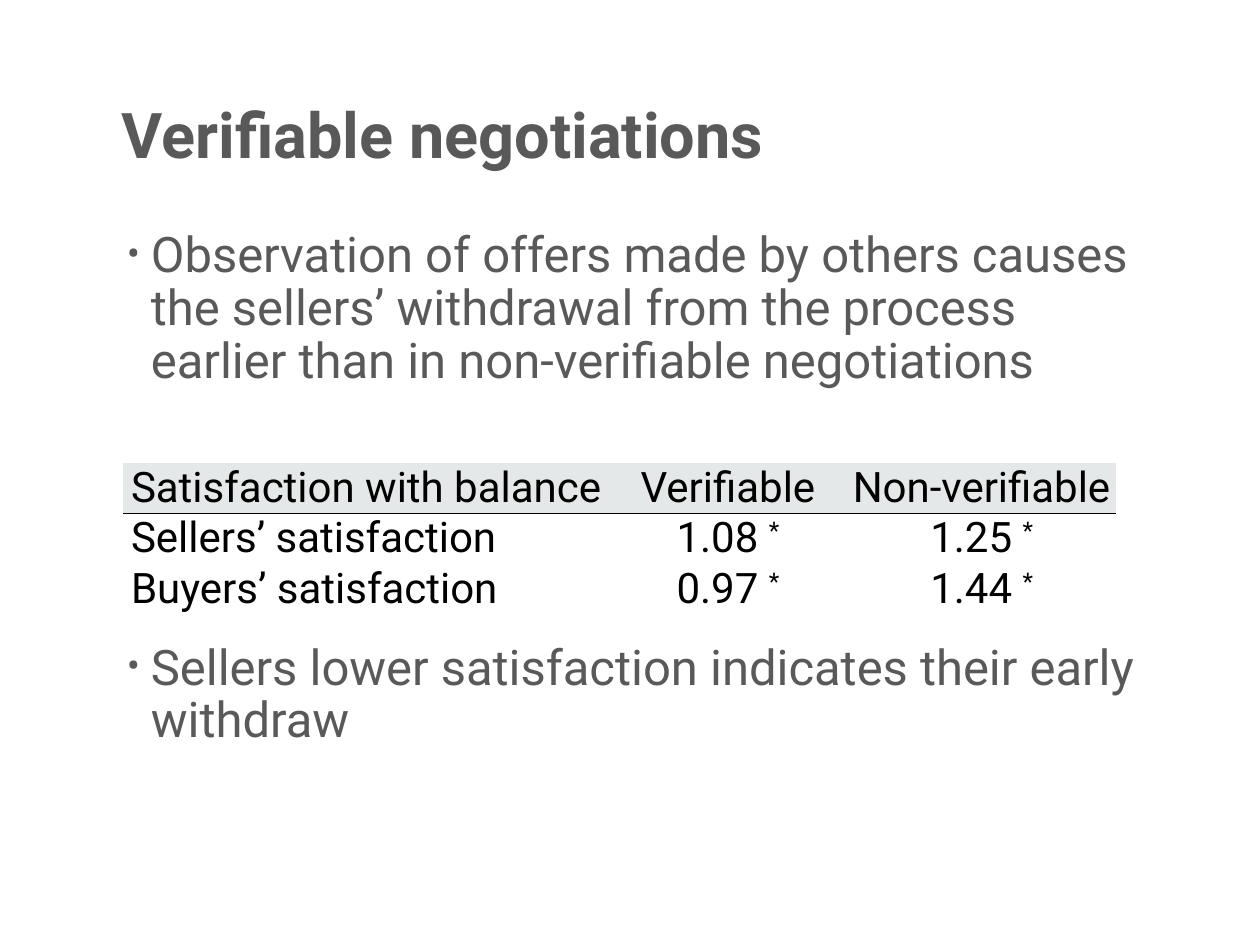
from dataclasses import dataclass

from lxml.etree import SubElement
from pptx import Presentation
from pptx.dml.color import RGBColor
from pptx.enum.text import MSO_ANCHOR as Anchor, PP_ALIGN as Align
from pptx.oxml.ns import qn
from pptx.util import Inches, Pt


@dataclass(frozen=True)
class Theme:
    """Colours, font and type sizes of the slide."""
    font: str = "Roboto"
    heading: str = "595959"
    ink: str = "000000"
    band: str = "E5E8E8"
    title_size: int = 36
    body_size: int = 28
    table_size: int = 24
    rule_width: int = 1


@dataclass(frozen=True)
class Box:
    """A region in inches."""
    left: float
    top: float
    width: float
    height: float

    def emu(self):
        """Return the region as slide lengths."""
        return [Inches(n) for n in (self.left, self.top, self.width, self.height)]


THEME = Theme()
WIDTH, HEIGHT = 10, 7.5
LEFT = 0.087 * WIDTH
TITLE = Box(LEFT, 0.077 * HEIGHT, 0.713 * WIDTH, 0.11 * HEIGHT)
BODY = Box(LEFT, 0.237 * HEIGHT, 0.83 * WIDTH, 0.61 * HEIGHT)
TABLE = Box(0.098 * WIDTH, 0.49 * HEIGHT, 0.788 * WIDTH, 0.156 * HEIGHT)
COLUMN_SHARES = (0.489, 0.241, 0.27)
BULLETS = (
    ("Observation of offers made by others causes the sellers’ withdrawal "
     "from the process earlier than in non-verifiable negotiations", 0),
    ("Sellers lower satisfaction indicates their early withdraw", 145),
)
SATISFACTION = (
    ("Satisfaction with balance", "Verifiable", "Non-verifiable"),
    ("Sellers’ satisfaction", "1.08 *", "1.25 *"),
    ("Buyers’ satisfaction", "0.97 *", "1.44 *"),
)


def write(paragraph, text, *, size, color, bold=False, align=Align.LEFT,
          spacing=1.0, before=0, raised=False):
    """Append formatted text to a paragraph."""
    paragraph.alignment = align
    paragraph.line_spacing = spacing
    paragraph.space_before = Pt(before)
    run = paragraph.add_run()
    run.text = text
    run.font.name = THEME.font
    run.font.size = Pt(size)
    run.font.bold = bold
    run.font.color.rgb = RGBColor.from_string(color)
    if raised:
        run.font._element.set("baseline", "30000")


def add_bullet(paragraph):
    """Give a paragraph a hanging bullet."""
    props = paragraph._p.get_or_add_pPr()
    props.set("marL", str(Inches(0.23)))
    props.set("indent", str(Inches(-0.19)))
    tint = SubElement(props, qn("a:buClr"))
    SubElement(tint, qn("a:srgbClr"), val=THEME.heading)
    SubElement(props, qn("a:buSzPct"), val="80000")
    SubElement(props, qn("a:buFont"), typeface=THEME.font)
    SubElement(props, qn("a:buChar"), char="•")


def set_borders(cell, ruled):
    """Clear the cell borders, ruling only the given sides."""
    props = cell._tc.get_or_add_tcPr()
    for side in ("lnL", "lnR", "lnT", "lnB"):
        width = Pt(THEME.rule_width) if side in ruled else 0
        line = SubElement(props, qn(f"a:{side}"), w=str(width))
        if side in ruled:
            fill = SubElement(line, qn("a:solidFill"))
            SubElement(fill, qn("a:srgbClr"), val=THEME.ink)
        else:
            SubElement(line, qn("a:noFill"))


def text_frame(slide, box, anchor):
    """Add a wrapping text box and return its frame."""
    frame = slide.shapes.add_textbox(*box.emu()).text_frame
    frame.word_wrap = True
    frame.vertical_anchor = anchor
    return frame


def add_title(slide, box):
    """Place the heading at the foot of its box."""
    frame = text_frame(slide, box, Anchor.BOTTOM)
    write(frame.paragraphs[0], "Verifiable negotiations", size=THEME.title_size,
          color=THEME.heading, bold=True, spacing=0.8)


def add_findings(slide, box):
    """Place the bullets, leaving room between them for the table."""
    frame = text_frame(slide, box, Anchor.TOP)
    for index, (finding, gap) in enumerate(BULLETS):
        paragraph = frame.add_paragraph() if index else frame.paragraphs[0]
        add_bullet(paragraph)
        write(paragraph, finding, size=THEME.body_size, color=THEME.heading,
              spacing=0.9, before=gap)


def fill_cell(cell, text, is_header, is_label):
    """Write one table cell, raising a trailing asterisk."""
    cell.margin_left = Inches(0.06 if is_label else 0)
    cell.margin_right = Inches(0.01)
    cell.margin_top = cell.margin_bottom = 0
    value = text.removesuffix("*")
    style = dict(size=THEME.table_size, color=THEME.ink,
                 align=Align.LEFT if is_label else Align.CENTER)
    paragraph = cell.text_frame.paragraphs[0]
    write(paragraph, value, **style)
    if value != text:
        write(paragraph, "*", raised=True, **style)
    if is_header:
        cell.fill.solid()
        cell.fill.fore_color.rgb = RGBColor.from_string(THEME.band)
    else:
        cell.fill.background()


def add_satisfaction(slide, box):
    """Place the satisfaction table with a rule under its header."""
    rows, columns = len(SATISFACTION), len(COLUMN_SHARES)
    table = slide.shapes.add_table(rows, columns, *box.emu()).table
    table.first_row = table.horz_banding = False
    for column, share in zip(table.columns, COLUMN_SHARES):
        column.width = Inches(box.width * share)
    for r, record in enumerate(SATISFACTION):
        table.rows[r].height = Inches(box.height / rows)
        for c, text in enumerate(record):
            cell = table.cell(r, c)
            set_borders(cell, {0: ("lnB",), 1: ("lnT",)}.get(r, ()))
            fill_cell(cell, text, is_header=r == 0, is_label=c == 0)


def main():
    """Build and save the slide."""
    deck = Presentation()
    deck.slide_width, deck.slide_height = Inches(WIDTH), Inches(HEIGHT)
    slide = deck.slides.add_slide(deck.slide_layouts[6])
    add_title(slide, TITLE)
    add_findings(slide, BODY)
    add_satisfaction(slide, TABLE)
    deck.save("out.pptx")


if __name__ == "__main__":
    main()
